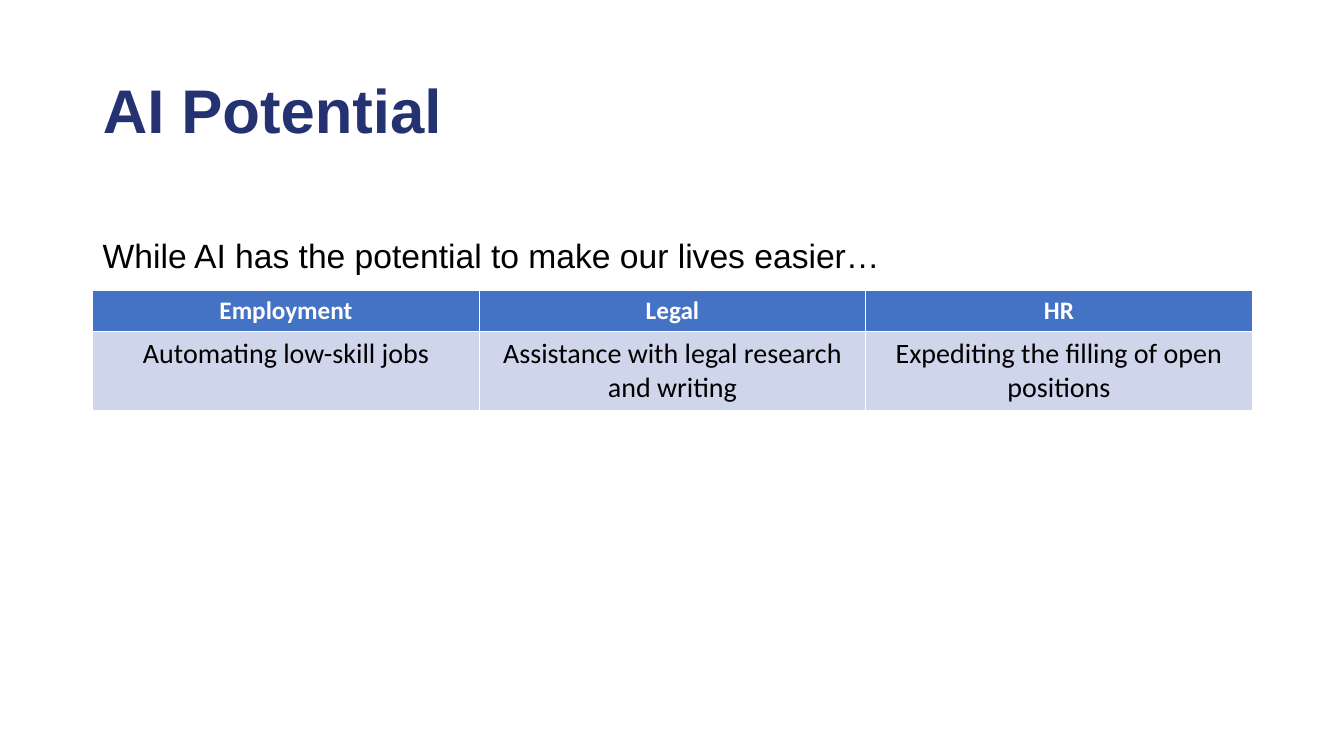
"""Build the AI Potential slide with its table of benefits."""
from pptx import Presentation
from pptx import util as u
from pptx.dml.color import RGBColor
from pptx.enum import text

COLORS = {
    "navy": "253271",
    "header": "4472C4",
    "body": "CFD5EA",
    "white": "FFFFFF",
    "black": "000000",
}
LEFT, WIDTH = 0.92, 11.5
BENEFITS = {
    "Employment": "Automating low-skill jobs",
    "Legal": "Assistance with legal research and writing",
    "HR": "Expediting the filling of open positions",
}


class SlideBuilder:
    """Holds the style and the current slide."""

    def __init__(self, prs):
        self.slide = prs.slides.add_slide(prs.slide_layouts[5])

    def set_words(self, frame, words, font, size, color, bold=False,
                  align=text.PP_ALIGN.LEFT):
        """Fill a text frame with one formatted paragraph."""
        frame.text = words
        paragraph = frame.paragraphs[0]
        paragraph.alignment = align
        for run in paragraph.runs:
            run.font.name = font
            run.font.size = u.Pt(size)
            run.font.bold = bold
            run.font.color.rgb = RGBColor.from_string(COLORS[color])
        return paragraph

    def title(self, words):
        """Place and format the slide title."""
        heading = self.slide.shapes.title
        heading.left, heading.top = u.Inches(LEFT), u.Inches(0.4)
        heading.width, heading.height = u.Inches(WIDTH), u.Inches(1.45)
        frame = heading.text_frame
        frame.vertical_anchor = text.MSO_ANCHOR.MIDDLE
        line = self.set_words(frame, words, "Arial", 44, "navy", True)
        line.line_spacing = 0.9

    def statement(self, words):
        """Add the single line that leads into the table."""
        lead = self.slide.shapes.add_textbox(
            u.Inches(LEFT), u.Inches(2.28), u.Inches(7.99), u.Inches(0.5))
        frame = lead.text_frame
        frame.word_wrap = False
        frame.auto_size = text.MSO_AUTO_SIZE.SHAPE_TO_FIT_TEXT
        self.set_words(frame, words, "Arial", 24, "black")

    def table(self, columns):
        """Add a header row and one body row from a dict of columns."""
        benefits = self.slide.shapes.add_table(
            2, len(columns), u.Inches(LEFT), u.Inches(2.88),
            u.Inches(WIDTH), u.Inches(1.17)).table
        for row, height in zip(benefits.rows, (0.41, 0.76)):
            row.height = u.Inches(height)
        rows = (
            (columns.keys(), "header", 18, "white", True),
            (columns.values(), "body", 20, "black", False),
        )
        for row, (entries, fill, size, color, bold) in zip(benefits.rows, rows):
            for cell, words in zip(row.cells, entries):
                cell.fill.solid()
                cell.fill.fore_color.rgb = RGBColor.from_string(COLORS[fill])
                self.set_words(cell.text_frame, words, "Calibri", size, color,
                               bold, text.PP_ALIGN.CENTER)


def main():
    """Assemble and save the slide."""
    prs = Presentation()
    prs.slide_width, prs.slide_height = u.Inches(13.33), u.Inches(7.5)
    builder = SlideBuilder(prs)
    builder.title("AI Potential")
    builder.table(BENEFITS)
    builder.statement("While AI has the potential to make our lives easier…")
    prs.save("out.pptx")


if __name__ == "__main__":
    main()
